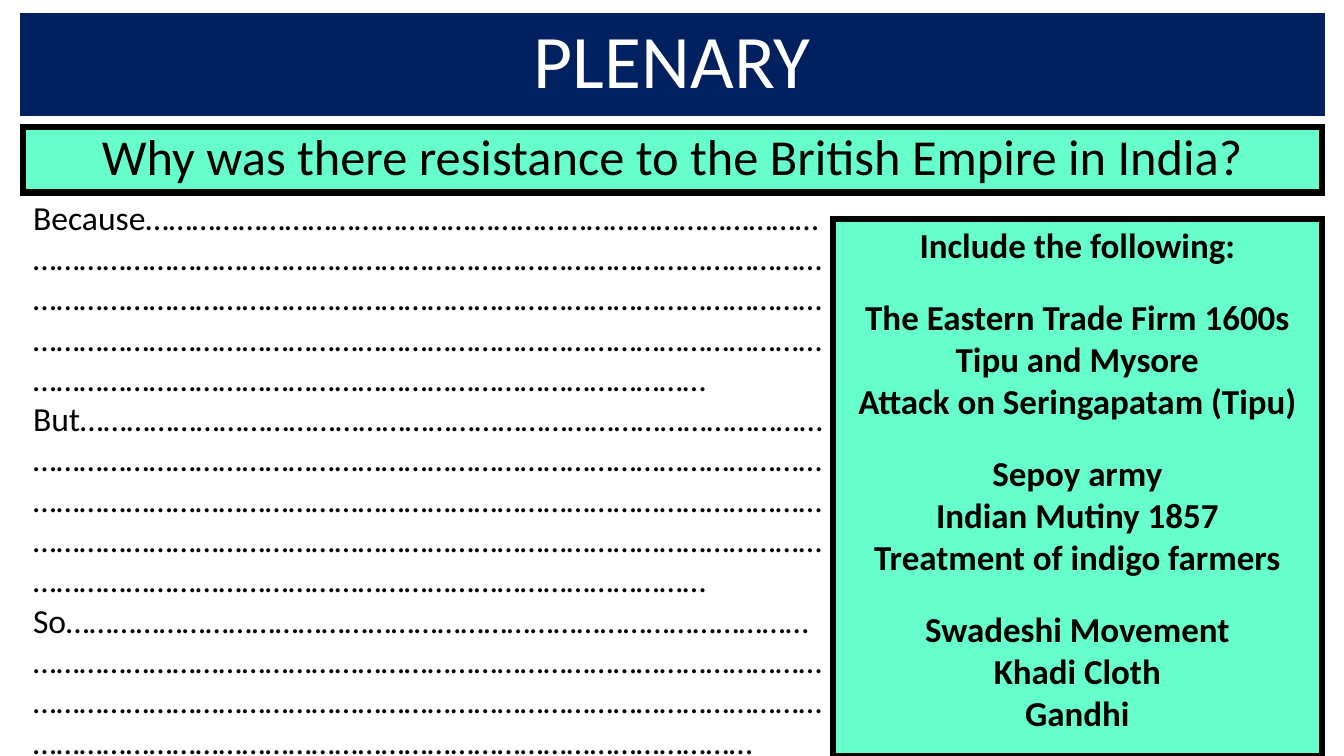
from lxml import etree
from pptx import Presentation, util as u
from pptx.dml.color import RGBColor
from pptx.enum import shapes, text
from pptx.oxml import ns

PX = 9144  # EMU per px, 100 px to the inch
COLORS = {"navy": "002060", "mint": "66FFCC", "black": "000000", "white": "FFFFFF"}


def style_box(sp, fill, line):
    sp.shadow.inherit = False
    sp.fill.solid()
    sp.fill.fore_color.rgb = RGBColor.from_string(COLORS[fill])
    sp.line.color.rgb = RGBColor.from_string(COLORS[line])
    sp.line.width = u.Pt(4.5)
    # Square corners on the border
    ln = sp.element.spPr.find(ns.qn("a:ln"))
    etree.SubElement(ln, ns.qn("a:miter"), lim="800000")


def write(tf, lines, size, color="black", align=text.PP_ALIGN.CENTER,
          bold=False, spacing=None, gaps=()):
    tf.word_wrap = True
    tf.auto_size = text.MSO_AUTO_SIZE.NONE
    for i, line in enumerate(lines):
        p = tf.paragraphs[0] if i == 0 else tf.add_paragraph()
        p.alignment = align
        p.line_spacing = spacing
        p.space_before = u.Pt(21.5 if i in gaps else 0)
        r = p.add_run()
        r.text = line
        r.font.name = "Calibri"
        r.font.size = u.Pt(size)
        r.font.bold = bold
        r.font.color.rgb = RGBColor.from_string(COLORS[color])


prs = Presentation()
prs.slide_width, prs.slide_height = 1333 * PX, 750 * PX
s = prs.slides.add_slide(prs.slide_layouts[5])

# Title banner
title = s.shapes.title
title.left, title.top, title.width, title.height = [v * PX for v in (23, 16, 1288, 96)]
style_box(title, "navy", "navy")
title.text_frame.vertical_anchor = text.MSO_ANCHOR.MIDDLE
write(title.text_frame, ["PLENARY"], 54, color="white", spacing=0.9)

# Key question
question = s.shapes.add_shape(shapes.MSO_SHAPE.RECTANGLE,
                              *[v * PX for v in (23, 126, 1288, 65)])
style_box(question, "mint", "black")
question.text_frame.vertical_anchor = text.MSO_ANCHOR.TOP
write(question.text_frame,
      ["Why was there resistance to the British Empire in India?"], 36, spacing=0.9)

# Sentence starters with dotted writing lines
starters = [("Because", 160), ("But", 163), ("So", 131)]
answers = s.shapes.add_textbox(*[v * PX for v in (23, 190, 803, 576)])
write(answers.text_frame, [word + "…" * dots for word, dots in starters], 24,
      align=text.PP_ALIGN.LEFT)

# Points to include, in groups set apart by a gap
points = [
    "Include the following:",
    "The Eastern Trade Firm 1600s", "Tipu and Mysore", "Attack on Seringapatam (Tipu)",
    "Sepoy army", "Indian Mutiny 1857", "Treatment of indigo farmers",
    "Swadeshi Movement", "Khadi Cloth", "Gandhi",
]
include = s.shapes.add_shape(shapes.MSO_SHAPE.RECTANGLE,
                             *[v * PX for v in (826, 217, 485, 533)])
style_box(include, "mint", "black")
include.text_frame.vertical_anchor = text.MSO_ANCHOR.TOP
write(include.text_frame, points, 25, bold=True, gaps=(1, 4, 7))

prs.save("out.pptx")
